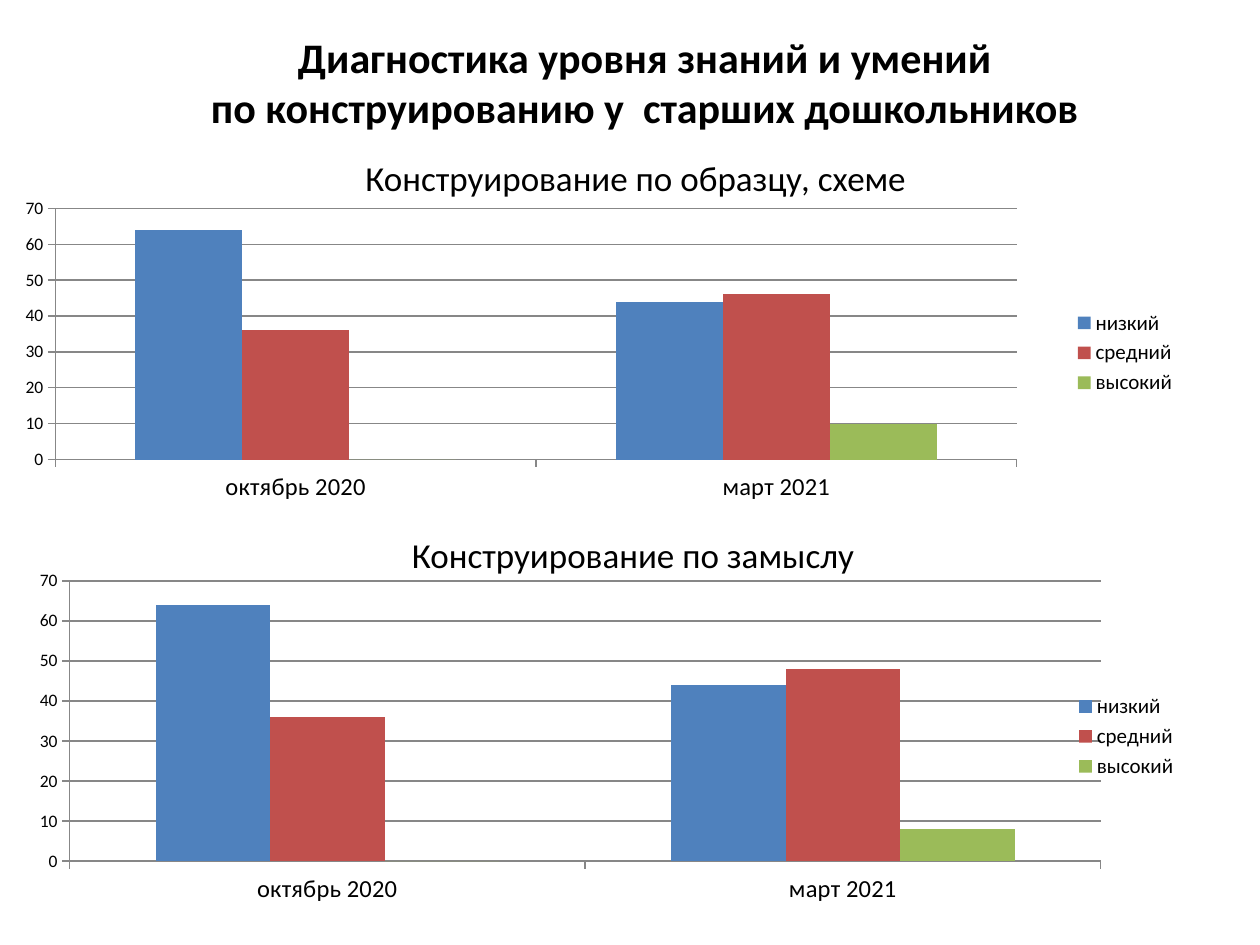
from lxml import etree
from pptx import Presentation
from pptx.chart.data import CategoryChartData
from pptx.dml.color import RGBColor
from pptx.enum.chart import XL_CHART_TYPE as ChartType, XL_LEGEND_POSITION as LegendSide
from pptx.enum.chart import XL_TICK_MARK as Tick
from pptx.enum.text import MSO_ANCHOR as Anchor, PP_ALIGN as Align
from pptx.oxml.ns import qn
from pptx.util import Inches, Pt

# Content
TITLE = "Диагностика уровня знаний и умений \vпо конструированию у  старших дошкольников "
PERIODS = ["октябрь 2020", "март 2021"]
LEVELS = ["низкий", "средний", "высокий"]
SECTIONS = [
    {
        "heading": "Конструирование по образцу, схеме",
        "heading_at": (0.2, 1.07, 9.69, 0.68),
        "chart_at": (-0.28, 1.5, 9.72, 2.6),
        "plot": {"x": 0.074, "y": 0.059, "w": 0.785, "h": 0.767},
        "values": [(64, 44), (36, 46), (0, 10)],
    },
    {
        "heading": "Конструирование по замыслу",
        "heading_at": (0.18, 4.06, 9.69, 0.68),
        "chart_at": (-0.2, 4.43, 9.65, 2.83),
        "plot": {"x": 0.078, "y": 0.064, "w": 0.848, "h": 0.786},
        "values": [(64, 44), (36, 48), (0, 8)],
    },
]

THEME = {
    "font": "Calibri",
    "text": "000000",
    "line": "878787",
    "levels": ["4F81BD", "C0504D", "9BBB59"],
    "title": 24,
    "heading": 20,
    "category": 14,
    "legend": 12,
    "chart": 10,
}


def style_font(font, size, bold=False):
    font.name = THEME["font"]
    font.size = Pt(size)
    font.bold = bold
    font.color.rgb = RGBColor.from_string(THEME["text"])


def add_text(page, text, at, size, bold=False):
    box = page.shapes.add_textbox(*map(Inches, at))
    frame = box.text_frame
    frame.word_wrap = True
    frame.vertical_anchor = Anchor.MIDDLE
    para = frame.paragraphs[0]
    para.text = text
    para.alignment = Align.CENTER
    for span in para.runs:
        style_font(span.font, size, bold)


def place_plot(chart, plot):
    """Fix the inner plot area, in fractions of the chart's size."""
    area = chart.element.find(".//" + qn("c:plotArea"))
    for old in area.findall(qn("c:layout")):
        area.remove(old)
    layout = etree.Element(qn("c:layout"))
    manual = etree.SubElement(layout, qn("c:manualLayout"))
    settings = {"layoutTarget": "inner", "xMode": "edge", "yMode": "edge", **plot}
    for name, value in settings.items():
        etree.SubElement(manual, qn(f"c:{name}")).set("val", str(value))
    area.insert(0, layout)


def add_level_chart(page, section):
    data = CategoryChartData(number_format="0")
    data.categories = PERIODS
    for level, values in zip(LEVELS, section["values"]):
        data.add_series(level, values)
    frame = page.shapes.add_chart(
        ChartType.COLUMN_CLUSTERED, *map(Inches, section["chart_at"]), data)
    chart = frame.chart
    chart.has_title = False
    style_font(chart.font, THEME["chart"])
    place_plot(chart, section["plot"])

    # Columns
    bars = chart.plots[0]
    bars.gap_width = 150
    bars.overlap = 0
    bars.vary_by_categories = False
    for series, color in zip(bars.series, THEME["levels"]):
        series.format.fill.solid()
        series.format.fill.fore_color.rgb = RGBColor.from_string(color)

    # Axes
    scale = chart.value_axis
    scale.minimum_scale, scale.maximum_scale, scale.major_unit = 0, 70, 10
    scale.has_major_gridlines = True
    scale.tick_labels.number_format = "0"
    scale.tick_labels.number_format_is_linked = False
    style_font(scale.tick_labels.font, THEME["chart"])
    style_font(chart.category_axis.tick_labels.font, THEME["category"])
    for axis in (scale, chart.category_axis):
        axis.major_tick_mark = Tick.OUTSIDE
        axis.minor_tick_mark = Tick.NONE
    for part in (scale, chart.category_axis, scale.major_gridlines):
        part.format.line.color.rgb = RGBColor.from_string(THEME["line"])
        part.format.line.width = Pt(0.75)

    # Legend
    chart.has_legend = True
    chart.legend.position = LegendSide.RIGHT
    chart.legend.include_in_layout = False
    style_font(chart.legend.font, THEME["legend"])


def main():
    deck = Presentation()
    deck.slide_width, deck.slide_height = Inches(10), Inches(7.5)
    page = deck.slides.add_slide(deck.slide_layouts[6])
    add_text(page, TITLE, (0.51, 0.15, 9.29, 1), THEME["title"], bold=True)
    for section in SECTIONS:
        add_text(page, section["heading"], section["heading_at"], THEME["heading"])
    for section in SECTIONS:
        add_level_chart(page, section)
    deck.save("out.pptx")


if __name__ == "__main__":
    main()
